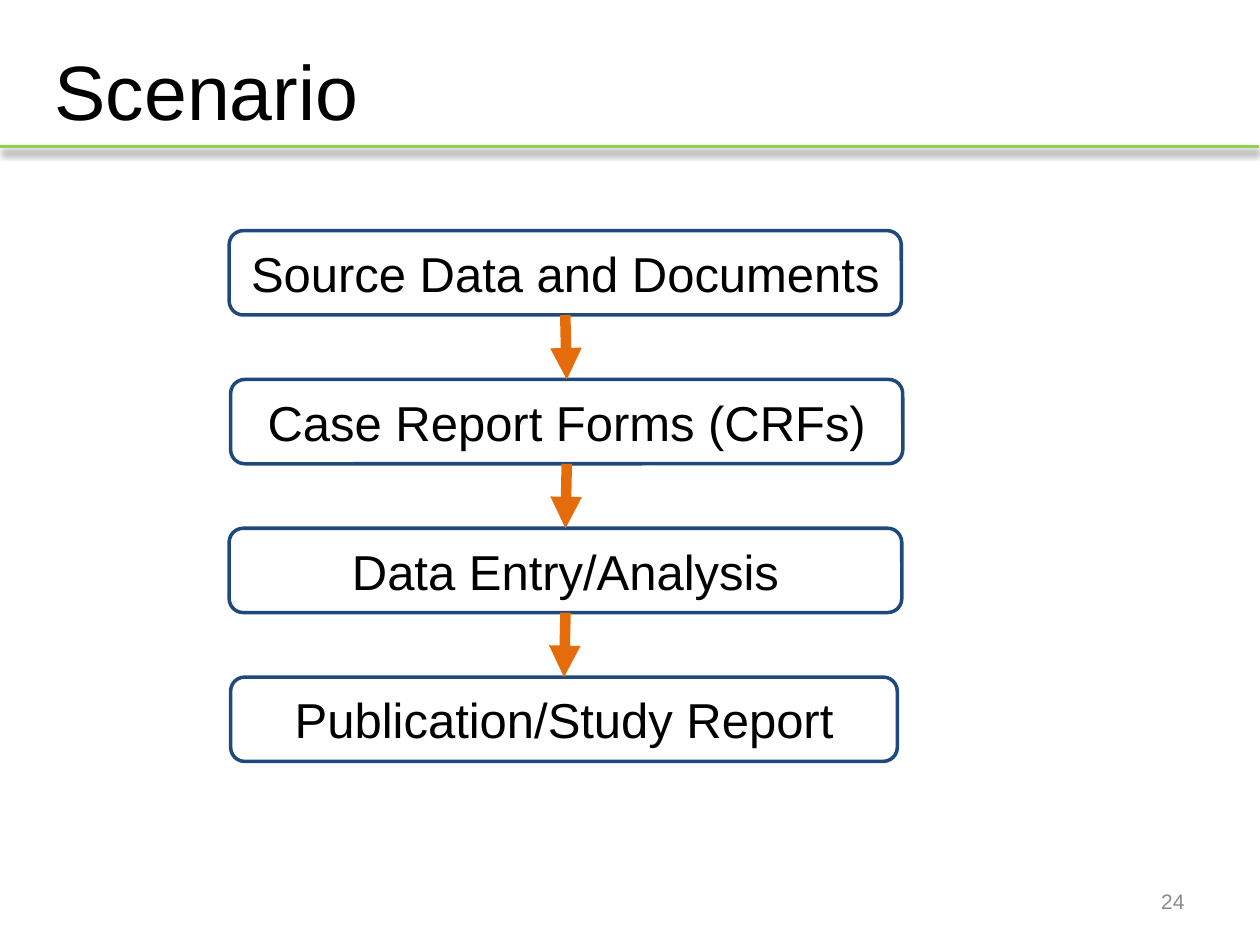
from lxml import etree
from pptx import Presentation
from pptx import util as u
from pptx.dml import color
from pptx.enum import shapes, text
from pptx.oxml import ns

COLORS = {"ink": "000000", "paper": "FFFFFF", "rule": "92D050",
          "border": "1F497D", "arrow": "E46C0A", "number": "8C8C8C"}


def write(holder, words, size, ink="ink", align=text.PP_ALIGN.LEFT):
    frame = holder.text_frame
    frame.word_wrap = True
    frame.vertical_anchor = text.MSO_ANCHOR.MIDDLE
    paragraph = frame.paragraphs[0]
    paragraph.alignment = align
    run = paragraph.add_run()
    run.text = words
    run.font.name = "Arial"
    run.font.size = u.Pt(size)
    run.font.color.rgb = color.RGBColor.from_string(COLORS[ink])


def draw_line(start, end, ink, width):
    line = slide.shapes.add_connector(shapes.MSO_CONNECTOR.STRAIGHT, *start, *end)
    line.line.color.rgb = color.RGBColor.from_string(COLORS[ink])
    line.line.width = u.Pt(width)
    effects = etree.SubElement(line._element.spPr, ns.qn("a:effectLst"))
    return line, effects


deck = Presentation()
deck.slide_width, deck.slide_height = u.Cm(25.4), u.Cm(19.05)
slide = deck.slides.add_slide(deck.slide_layouts[6])

# Green rule with a soft shadow below it
rule, rule_effects = draw_line((0, u.Cm(2.95)), (u.Cm(25.38), u.Cm(2.95)), "rule", 2)
shadow = etree.SubElement(rule_effects, ns.qn("a:outerShdw"), blurRad=str(u.Pt(4)),
                          dist=str(u.Pt(3)), dir="5400000", rotWithShape="0")
shade = etree.SubElement(shadow, ns.qn("a:srgbClr"), val=COLORS["ink"])
etree.SubElement(shade, ns.qn("a:alpha"), val="40000")

# Page number and title
page_number = slide.shapes.add_textbox(u.Cm(18.2), u.Cm(17.66), u.Cm(5.93), u.Cm(1.01))
write(page_number, "24", 12, ink="number", align=text.PP_ALIGN.RIGHT)
title = slide.shapes.add_textbox(u.Cm(0.85), u.Cm(0.21), u.Cm(23.7), u.Cm(3.18))
write(title, "Scenario", 44)

# Steps from source data to publication: label, left, width
steps = [("Source Data and Documents", 4.62, 13.55),
         ("Case Report Forms (CRFs)", 4.65, 13.55),
         ("Data Entry/Analysis", 4.62, 13.56),
         ("Publication/Study Report", 4.65, 13.44)]
FIRST_TOP, PITCH, STEP_HEIGHT = 4.65, 3, 1.7
boxes = []
for row, (label, left, width) in enumerate(steps):
    box = slide.shapes.add_shape(
        shapes.MSO_SHAPE.ROUNDED_RECTANGLE, u.Cm(left),
        u.Cm(FIRST_TOP + row * PITCH), u.Cm(width), u.Cm(STEP_HEIGHT))
    box.shadow.inherit = False
    box.fill.solid()
    box.fill.fore_color.rgb = color.RGBColor.from_string(COLORS["paper"])
    box.line.color.rgb = color.RGBColor.from_string(COLORS["border"])
    box.line.width = u.Pt(2)
    write(box, label, 28, align=text.PP_ALIGN.CENTER)
    boxes.append(box)

# Arrows from the bottom of each step to the top of the next
for upper, lower in zip(boxes, boxes[1:]):
    arrow, _ = draw_line((0, 0), (0, 0), "arrow", 6)
    arrow.begin_connect(upper, 2)
    arrow.end_connect(lower, 0)
    etree.SubElement(arrow.line._get_or_add_ln(), ns.qn("a:tailEnd"), type="triangle")

deck.save("out.pptx")
